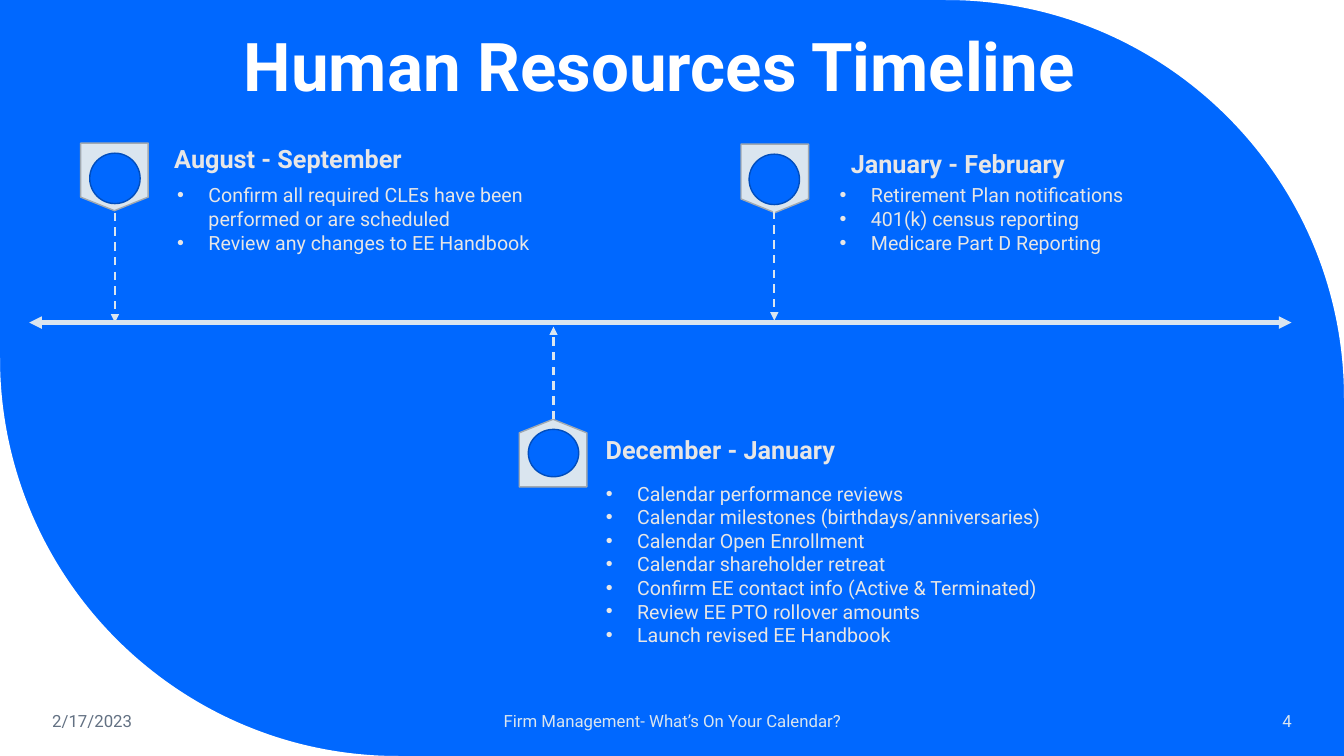
from lxml.etree import SubElement
from pptx import Presentation
from pptx.dml.color import RGBColor
from pptx.enum.dml import MSO_LINE
from pptx.enum.shapes import MSO_CONNECTOR, MSO_SHAPE as Shape
from pptx.enum.text import MSO_ANCHOR as Anchor, MSO_AUTO_SIZE as AutoSize, PP_ALIGN as Align
from pptx.oxml.ns import qn
from pptx.util import Inches, Pt

COLORS = {
    "blue": "0068FF", "blue_edge": "004DBD", "white": "FFFFFF", "pale": "DAE5EF",
    "pale_edge": "A1A9B1", "text": "E7E6E6", "slate": "637183",
}
COLORS = {name: RGBColor.from_string(value) for name, value in COLORS.items()}
WIDTH, HEIGHT, RADIUS = 13.33, 7.5, 3.95

prs = Presentation()
prs.slide_width, prs.slide_height = Inches(WIDTH), Inches(HEIGHT)
s = prs.slides.add_slide(prs.slide_layouts[5])
s.background.fill.solid()
s.background.fill.fore_color.rgb = COLORS["blue"]


def write(sp, lines, size, color, bold=False, align=Align.LEFT, anchor=Anchor.TOP,
          bullet=False, fit=AutoSize.NONE):
    tf = sp.text_frame
    frame = {"word_wrap": True, "auto_size": fit, "vertical_anchor": anchor}
    for name, value in frame.items():
        setattr(tf, name, value)
    for i, line in enumerate(lines):
        p = tf.add_paragraph() if i else tf.paragraphs[0]
        p.alignment = align
        r = p.add_run()
        r.text = line
        for name, value in {"name": "Roboto", "size": Pt(size), "bold": bold}.items():
            setattr(r.font, name, value)
        r.font.color.rgb = COLORS[color]
        if bullet:
            pPr = p._p.get_or_add_pPr()
            pPr.set("marL", str(Inches(0.31)))
            pPr.set("indent", str(Inches(-0.31)))
            SubElement(pPr, qn("a:buFont"), typeface="Arial")
            SubElement(pPr, qn("a:buChar"), char="•")


def arrow(x1, y1, x2, y2, width, ends, dash=None):
    line = s.shapes.add_connector(
        MSO_CONNECTOR.STRAIGHT, Inches(x1), Inches(y1), Inches(x2), Inches(y2))
    line.line.color.rgb = COLORS["pale"]
    line.line.width = Pt(width)
    if dash:
        line.line.dash_style = dash
    ln = line.line._get_or_add_ln()
    for end in ends:
        SubElement(ln, qn(f"a:{end}"), type="triangle")
    SubElement(line._element.spPr, qn("a:effectLst"))


corners = [
    ((WIDTH - RADIUS, 0), (WIDTH, RADIUS), (WIDTH, 0), [(2.18, 0), (3.95, 1.77)]),
    ((RADIUS, HEIGHT), (0, HEIGHT - RADIUS), (0, HEIGHT), [(1.77, 3.95), (0, 2.18)]),
]
for start, end, tip, controls in corners:
    builder = s.shapes.build_freeform(*map(Inches, start))
    builder.add_line_segments([tuple(map(Inches, point)) for point in (end, tip)], close=True)
    corner = builder.convert_to_shape()
    corner.shadow.inherit = False
    corner.fill.solid()
    corner.fill.fore_color.rgb = COLORS["white"]
    corner.line.fill.background()
    curve = corner._element.find(".//" + qn("a:lnTo"))
    curve.tag = qn("a:cubicBezTo")
    for i, (x, y) in enumerate(controls):
        pt = SubElement(curve, qn("a:pt"), x=str(Inches(x)), y=str(Inches(y)))
        curve.insert(i, pt)

title = s.shapes.title
box = {"left": 1.28, "top": 0.42, "width": 10.69, "height": 0.68}
for name, value in box.items():
    setattr(title, name, Inches(value))
write(title, ["Human Resources Timeline "], 48, "white", True, Align.CENTER, Anchor.BOTTOM)
title.text_frame.paragraphs[0].line_spacing = 0.9

footers = [
    (0.42, 1.86, "2/17/2023", "slate", Align.LEFT),
    (4.42, 4.5, "Firm Management- What’s On Your Calendar?", "pale", Align.CENTER),
    (11.1, 1.81, "4", "pale", Align.RIGHT),
]
for left, width, text, color, align in footers:
    sp = s.shapes.add_textbox(Inches(left), Inches(6.95), Inches(width), Inches(0.4))
    write(sp, [text], 12, color, align=align, anchor=Anchor.MIDDLE)

marker_shapes = [
    (Shape.FLOWCHART_OFFPAGE_CONNECTOR, "pale", [
        (0.8, 1.42, 0.67, 0.67, 0),
        (5.15, 4.16, 0.67, 0.67, 180),
        (7.35, 1.43, 0.67, 0.68, 0),
    ]),
    (Shape.FLOWCHART_CONNECTOR, "blue", [
        (0.89, 1.52, 0.5, 0.5, 0),
        (5.24, 4.26, 0.5, 0.47, 0),
        (7.43, 1.53, 0.5, 0.5, 0),
    ]),
]
for kind, color, places in marker_shapes:
    for *place, rotation in places:
        sp = s.shapes.add_shape(kind, *map(Inches, place))
        sp.shadow.inherit = False
        sp.rotation = rotation
        sp.fill.solid()
        sp.fill.fore_color.rgb = COLORS[color]
        sp.line.color.rgb = COLORS[f"{color}_edge"]
        sp.line.width = Pt(1)

periods = [
    ("August - September", (1.63, 1.37, 3.54, 0.4), (1.66, 1.77, 4.5, 0.81), [
        "Confirm all required CLEs have been performed or are scheduled",
        "Review any changes to EE Handbook",
    ]),
    ("December - January", (5.91, 4.26, 4.47, 0.4), (5.91, 4.73, 6.28, 1.75), [
        "Calendar performance reviews",
        "Calendar milestones (birthdays/anniversaries)",
        "Calendar Open Enrollment",
        "Calendar shareholder retreat",
        "Confirm EE contact info (Active & Terminated)",
        "Review EE PTO rollover amounts",
        "Launch revised EE Handbook",
    ]),
    ("January - February", (8.34, 1.42, 3.15, 0.4), (8.23, 1.77, 4.4, 0.81), [
        "Retirement Plan notifications",
        "401(k) census reporting",
        "Medicare Part D Reporting",
    ]),
]
for heading, heading_box, tasks_box, tasks in periods:
    sp = s.shapes.add_textbox(*map(Inches, heading_box))
    write(sp, [heading], 18, "text", bold=True, fit=AutoSize.SHAPE_TO_FIT_TEXT)
    sp = s.shapes.add_textbox(*map(Inches, tasks_box))
    write(sp, tasks, 14, "text", bullet=True, fit=AutoSize.SHAPE_TO_FIT_TEXT)

arrow(0.29, 3.2, 12.81, 3.2, 3, ["headEnd", "tailEnd"])
for x, start, end in [(1.14, 2.11, 3.2), (5.49, 4.16, 3.24), (7.68, 2.09, 3.18)]:
    arrow(x, start, x, end, 1.5, ["tailEnd"], MSO_LINE.DASH)

prs.save("out.pptx")
